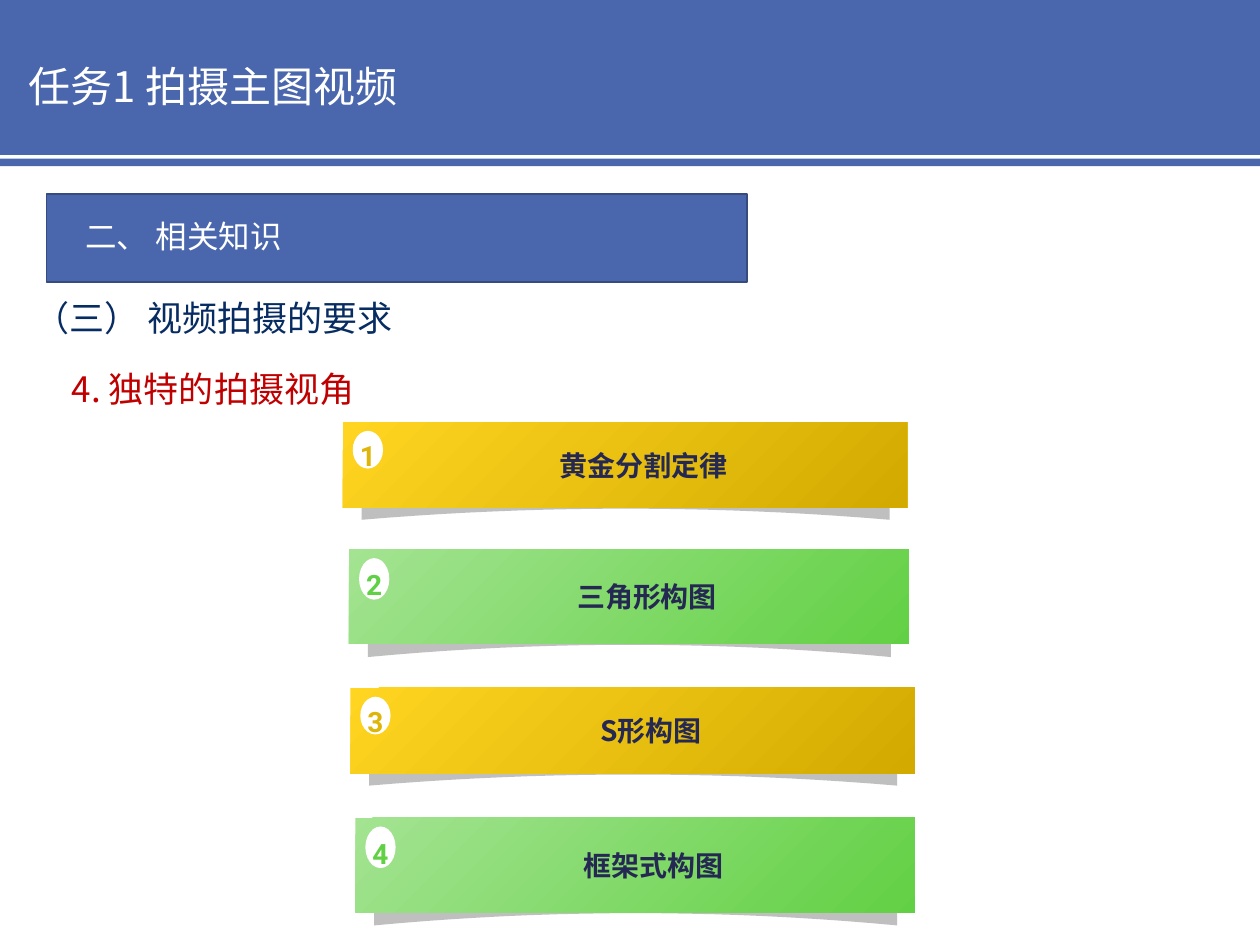
from pptx import Presentation
from pptx.dml.color import RGBColor
from pptx.enum.shapes import MSO_SHAPE as Shape
from pptx.enum.text import MSO_ANCHOR as Anchor, MSO_AUTO_SIZE as AutoSize, PP_ALIGN as Align
from pptx.oxml.ns import qn
from pptx.util import Inches, Pt

BLUE = RGBColor(0x4A, 0x66, 0xAC)
BLUE_EDGE = RGBColor(0x37, 0x4B, 0x7F)
NAVY = RGBColor(0x07, 0x2C, 0x62)
INK = RGBColor(0x24, 0x28, 0x52)
RED = RGBColor(0xC0, 0x00, 0x00)
WHITE = RGBColor(0xFF, 0xFF, 0xFF)
GRAY = RGBColor(0xBF, 0xBF, 0xBF)
# Gradient start, gradient end, badge number
YELLOW = (RGBColor(0xFF, 0xD5, 0x21), RGBColor(0xD2, 0xAA, 0x00), RGBColor(0xDE, 0xB5, 0x09))
GREEN = (RGBColor(0xA3, 0xE3, 0x91), RGBColor(0x62, 0xD0, 0x44), RGBColor(0x62, 0xD0, 0x44))
CJK_FONT, NUMBER_FONT = "Noto Sans CJK SC", "Roboto"

# Label, colours, box in inches
BARS = [
    ("黄金分割定律", YELLOW, (2.72, 3.35, 4.48, 0.68)),
    ("三角形构图", GREEN, (2.77, 4.36, 4.44, 0.75)),
    ("S形构图", YELLOW, (2.78, 5.46, 4.48, 0.68)),
    ("框架式构图", GREEN, (2.82, 6.49, 4.44, 0.75)),
]


def inches(box):
    return [Inches(value) for value in box]


def place(shape, box):
    shape.left, shape.top, shape.width, shape.height = inches(box)


def add_plain_shape(shapes, kind, box, color=None):
    shape = shapes.add_shape(kind, *inches(box))
    shape.shadow.inherit = False
    shape.line.fill.background()
    if color is not None:
        shape.fill.solid()
        shape.fill.fore_color.rgb = color
    return shape


def write(shape, text, size, color, font=CJK_FONT, bold=False, align=Align.LEFT,
          anchor=Anchor.TOP, insets=(0.1, 0.05, 0.1, 0.05)):
    frame = shape.text_frame
    frame.word_wrap = True
    frame.auto_size = AutoSize.NONE
    frame.vertical_anchor = anchor
    (frame.margin_left, frame.margin_top,
     frame.margin_right, frame.margin_bottom) = inches(insets)
    paragraph = frame.paragraphs[0]
    paragraph.alignment = align
    run = paragraph.add_run()
    run.text = text
    run.font.name = font
    run.font.size = Pt(size)
    run.font.bold = bold
    run.font.color.rgb = color
    east_asian = run.font._element.makeelement(qn("a:ea"), {"typeface": font})
    run.font._element.find(qn("a:latin")).addnext(east_asian)
    return paragraph


def add_header(slide, box):
    left, top, width, height = box
    # Wide band with a thin stripe below it
    add_plain_shape(slide.shapes, Shape.RECTANGLE, (left, top, width, height - 0.09), BLUE)
    add_plain_shape(slide.shapes, Shape.RECTANGLE, (left, top + height - 0.06, width, 0.06), BLUE)
    # Title in front of the band
    title = slide.shapes.title
    slide.shapes._spTree.append(title._element)
    place(title, (left + 0.13, top + 0.24, 5.27, 0.88))
    write(title, "任务1 拍摄主图视频", 24, WHITE, anchor=Anchor.MIDDLE)


def add_section(slide, box):
    left, top, _, _ = box
    panel = add_plain_shape(slide.shapes, Shape.RECTANGLE, box, BLUE)
    panel.line.color.rgb = BLUE_EDGE
    panel.line.width = Pt(1)
    label = slide.shapes.add_textbox(*inches((left + 0.21, top + 0.13, 4.38, 0.51)))
    write(label, "二、 相关知识", 18, WHITE)


def fill_heading(placeholder, box, text, color):
    place(placeholder, box)
    paragraph = write(placeholder, text, 20, color)
    paragraph.space_before = Pt(0)
    # No bullet and no hanging indent
    properties = paragraph._p.get_or_add_pPr()
    properties.set("marL", "0")
    properties.set("indent", "0")
    properties.append(properties.makeelement(qn("a:buNone"), {}))
    return paragraph


def add_curved_shadow(shapes, box):
    left, top, width, height = box
    middle = left + width / 2
    # Lower edge is a parabola that rises towards the middle
    steps = [1 - step / 10 for step in range(21)]
    points = [(middle + u * width / 2, top + height * (0.73 + 0.27 * u * u)) for u in steps]
    points += [(left, top + height * 0.25), (middle, top), (left + width, top + height * 0.25)]
    points = [(Inches(x), Inches(y)) for x, y in points]
    builder = shapes.build_freeform(*points[0])
    builder.add_line_segments(points[1:], close=True)
    shadow = builder.convert_to_shape()
    shadow.shadow.inherit = False
    shadow.fill.solid()
    shadow.fill.fore_color.rgb = GRAY
    shadow.line.fill.background()


def add_bar(slide, box, number, label, colors):
    left, top, width, height = box
    start, end, number_color = colors
    shapes = slide.shapes.add_group_shape().shapes
    add_curved_shadow(shapes, (left + 0.15, top + 0.66 * height, width - 0.29, 0.48 * height))
    # Gradient bar
    bar = add_plain_shape(shapes, Shape.RECTANGLE, box)
    bar.fill.gradient()
    bar.fill.gradient_angle = 315
    for stop, color in zip(bar.fill.gradient_stops, (start, end)):
        stop.color.rgb = color
    write(bar, label, 16, INK, bold=True, align=Align.CENTER, anchor=Anchor.MIDDLE,
          insets=(0.39, 0.05, 0.1, 0.05))
    # Number badge
    badge = add_plain_shape(shapes, Shape.OVAL, (left + 0.08, top + 0.07, 0.24, 0.44 * height), WHITE)
    paragraph = write(badge, str(number), 16, number_color, NUMBER_FONT, True,
                      Align.CENTER, Anchor.MIDDLE, (0, 0.04, 0, 0))
    paragraph.line_spacing = 1.2


def main():
    presentation = Presentation()
    presentation.slide_width, presentation.slide_height = Inches(10), Inches(7.5)
    slide = presentation.slides.add_slide(presentation.slide_layouts[3])
    add_header(slide, (0, 0, 10, 1.32))
    add_section(slide, (0.37, 1.54, 5.56, 0.7))

    # Headings
    fill_heading(slide.placeholders[1], (0.17, 2.3, 4.59, 0.58), "（三） 视频拍摄的要求", NAVY)
    topic = fill_heading(slide.placeholders[2], (0.47, 2.77, 4.59, 0.58), "4. 独特的拍摄视角", RED)
    topic.line_spacing = 1.3
    topic.space_before = Pt(4)

    for number, (label, colors, box) in enumerate(BARS, 1):
        add_bar(slide, box, number, label, colors)
    presentation.save("out.pptx")


if __name__ == "__main__":
    main()
